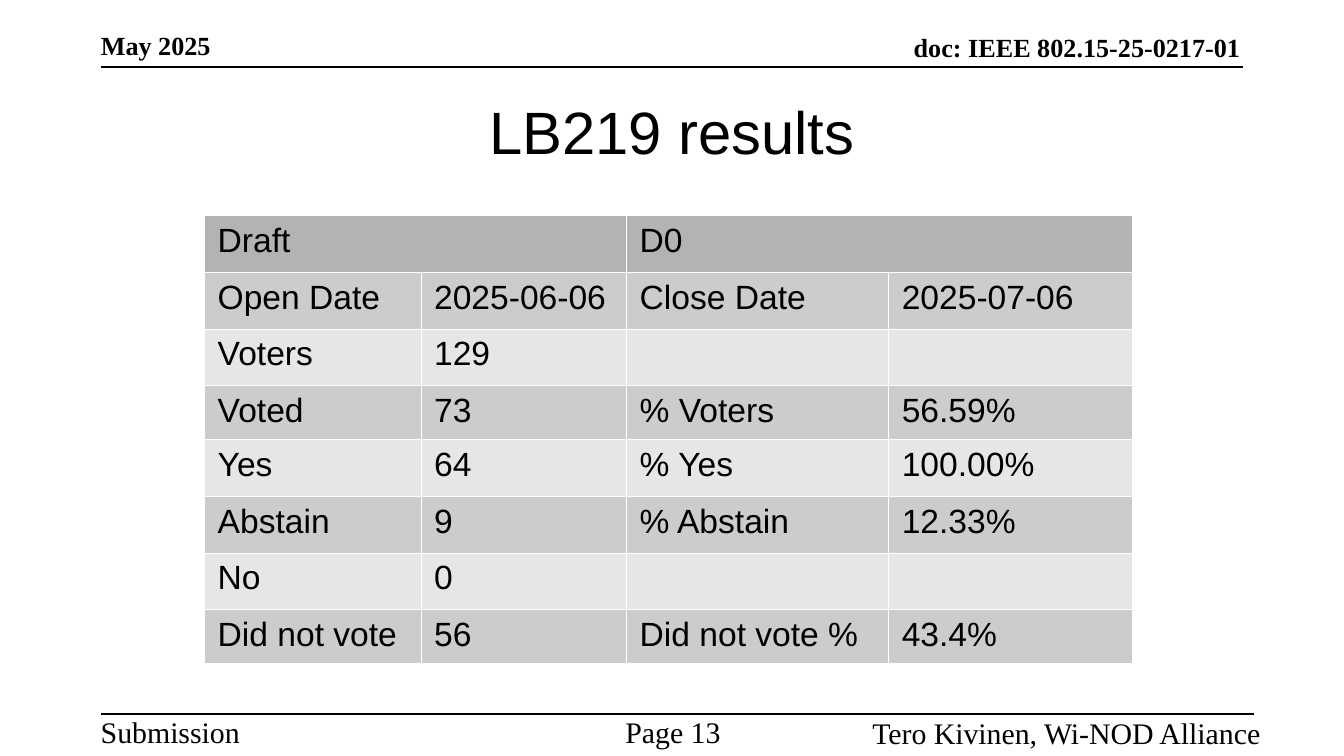
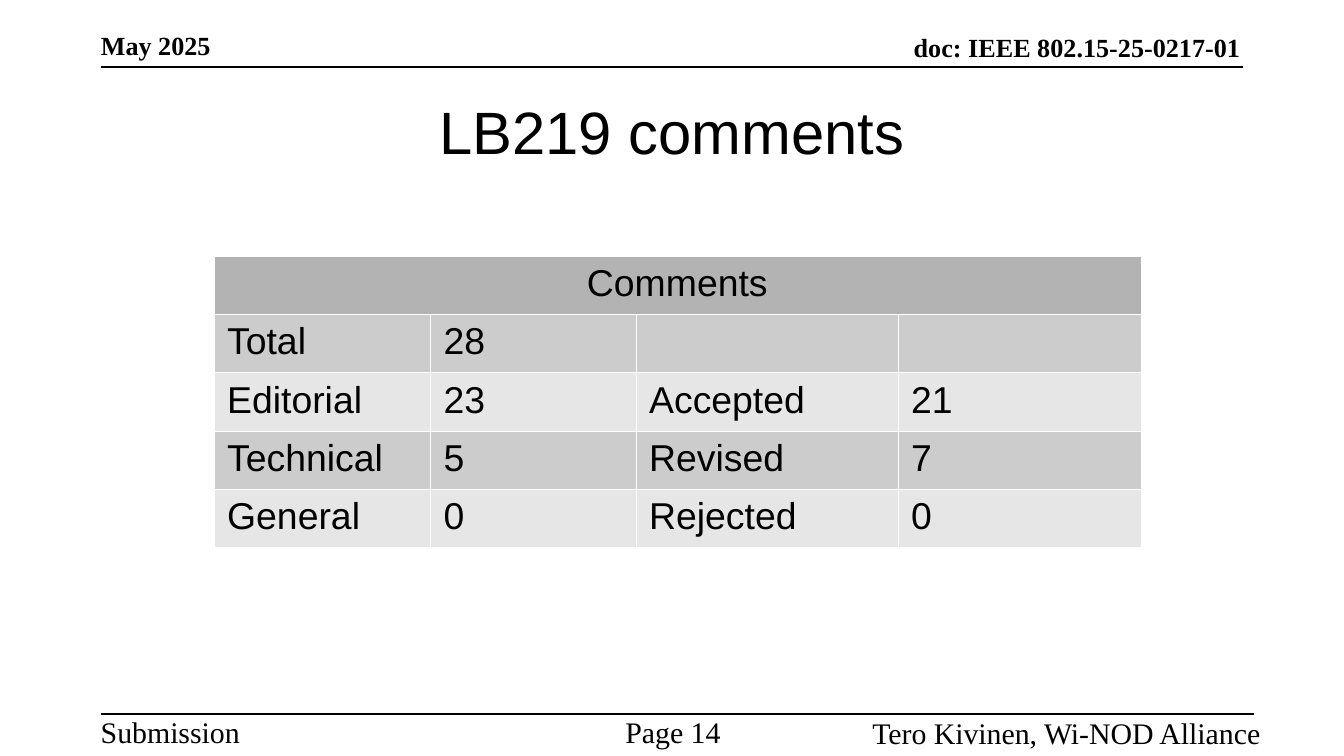
from dataclasses import dataclass

from lxml.etree import SubElement
from pptx import Presentation
from pptx.dml.color import RGBColor
from pptx.enum.shapes import MSO_CONNECTOR
from pptx.enum.text import MSO_ANCHOR, PP_ALIGN
from pptx.oxml.ns import qn
from pptx.slide import Slide
from pptx.table import _Cell
from pptx.util import Emu, Inches, Pt

WIDTH, HEIGHT = Inches(10), Inches(5.625)
GRID_COLUMNS, GRID_ROWS = 100, 40

BLACK, WHITE = "000000", "FFFFFF"
HEADING_FILL = "B3B3B3"
BAND_FILLS = ("CCCCCC", "E6E6E6")
SANS, SERIF = "Arial", "Times New Roman"
BORDER_WIDTH = Pt(0.06)

LEFT_EDGE = 7.5
HEADER_RULE, FOOTER_RULE = 3.56, 37.76
TABLE_COLUMNS = (16.1, 15.3, 19.5, 18.1)
TABLE_ROW, SHORT_ROW = 3, 2.7


@dataclass(frozen=True)
class Label:
    """A line of text; its place is in grid columns and rows."""
    text: str
    left: float
    top: float
    width: float
    height: float
    size: float
    font: str = SERIF
    bold: bool = False
    align: PP_ALIGN = PP_ALIGN.LEFT
    anchor: MSO_ANCHOR = MSO_ANCHOR.TOP


@dataclass(frozen=True)
class Rule:
    row: float
    right: float


@dataclass(frozen=True)
class Heading:
    """A cell of the top row, spanning some columns."""
    text: str
    span: int
    align: PP_ALIGN = PP_ALIGN.LEFT


@dataclass(frozen=True)
class ResultPage:
    title: str
    number: int
    left: float
    top: float
    size: float
    headings: tuple[Heading, ...]
    body: tuple[tuple[str, ...], ...]
    short_rows: tuple[int, ...] = ()


RULES = (Rule(HEADER_RULE, 92.5), Rule(FOOTER_RULE, 93.3))
FURNITURE = (
    Label("doc: IEEE 802.15-25-0217-01", 33.9, 2.28, 58.4, 1.07, 14, bold=True,
          align=PP_ALIGN.RIGHT, anchor=MSO_ANCHOR.BOTTOM),
    Label("May 2025", LEFT_EDGE, 2.13, 27.9, 1.07, 14, bold=True,
          anchor=MSO_ANCHOR.BOTTOM),
    Label("Submission", LEFT_EDGE, FOOTER_RULE, 18.7, 1.64, 16),
    Label("Tero Kivinen, Wi-NOD Alliance", 57.1, 37.83, 36.7, 1.64, 16,
          align=PP_ALIGN.RIGHT),
)

PAGES = (
    ResultPage(
        "LB219 results", 13, 15.2, 11.4, 18,
        (Heading("Draft", 2), Heading("D0", 2)),
        (
            ("Open Date", "2025-06-06", "Close Date", "2025-07-06"),
            ("Voters", "129", "", ""),
            ("Voted", "73", "% Voters", "56.59%"),
            ("Yes", "64", "% Yes", "100.00%"),
            ("Abstain", "9", "% Abstain", "12.33%"),
            ("No", "0", "", ""),
            ("Did not vote", "56", "Did not vote %", "43.4%"),
        ),
        short_rows=(3, 7),
    ),
    ResultPage(
        "LB219 comments", 14, 15.9, 13.54, 20,
        (Heading("Comments", 4, PP_ALIGN.CENTER),),
        (
            ("Total", "28", "", ""),
            ("Editorial", "23", "Accepted", "21"),
            ("Technical", "5", "Revised", "7"),
            ("General", "0", "Rejected", "0"),
        ),
    ),
)


def across(columns: float) -> Emu:
    return Emu(round(WIDTH * columns / GRID_COLUMNS))


def down(rows: float) -> Emu:
    return Emu(round(HEIGHT * rows / GRID_ROWS))


def color(value: str) -> RGBColor:
    return RGBColor.from_string(value)


def style_paragraph(para, size: float, font: str, align: PP_ALIGN,
                    bold: bool = False) -> None:
    para.alignment = align
    para.font.size = Pt(size)
    para.font.name = font
    para.font.bold = bold
    para.font.color.rgb = color(BLACK)


def add_label(page: Slide, label: Label) -> None:
    box = page.shapes.add_textbox(across(label.left), down(label.top),
                                  across(label.width), down(label.height))
    frame = box.text_frame
    frame.word_wrap = True
    frame.vertical_anchor = label.anchor
    frame.margin_left = frame.margin_right = 0
    frame.margin_top = frame.margin_bottom = 0
    frame.text = label.text
    style_paragraph(frame.paragraphs[0], label.size, label.font, label.align,
                    label.bold)


def add_rule(page: Slide, rule: Rule) -> None:
    line = page.shapes.add_connector(
        MSO_CONNECTOR.STRAIGHT, across(LEFT_EDGE), down(rule.row),
        across(rule.right), down(rule.row))
    line.line.color.rgb = color(BLACK)
    line.line.width = Pt(1)
    SubElement(line._element.spPr, qn("a:effectLst"))


def paint_cell(cell: _Cell, fill: str) -> None:
    """Give a cell thin white borders and a solid fill."""
    properties = cell._tc.get_or_add_tcPr()
    for side in ("lnL", "lnR", "lnT", "lnB"):
        border = SubElement(properties, qn(f"a:{side}"), w=str(BORDER_WIDTH))
        solid = SubElement(border, qn("a:solidFill"))
        SubElement(solid, qn("a:srgbClr"), val=WHITE)
    cell.fill.solid()
    cell.fill.fore_color.rgb = color(fill)


def write_cell(cell: _Cell, text: str, size: float,
               align: PP_ALIGN = PP_ALIGN.LEFT) -> None:
    cell.text = text
    style_paragraph(cell.text_frame.paragraphs[0], size, SANS, align)


def add_result_table(page: Slide, result: ResultPage) -> None:
    heights = [SHORT_ROW if index in result.short_rows else TABLE_ROW
               for index in range(len(result.body) + 1)]
    table = page.shapes.add_table(
        len(heights), len(TABLE_COLUMNS), across(result.left),
        down(result.top), across(sum(TABLE_COLUMNS)), down(sum(heights))).table
    table.first_row = table.horz_banding = False
    for column, width in zip(table.columns, TABLE_COLUMNS):
        column.width = across(width)
    for index, (row, height) in enumerate(zip(table.rows, heights)):
        row.height = down(height)
        fill = BAND_FILLS[(index - 1) % 2] if index else HEADING_FILL
        for cell in row.cells:
            paint_cell(cell, fill)

    start = 0
    for heading in result.headings:
        cell = table.cell(0, start)
        cell.merge(table.cell(0, start + heading.span - 1))
        write_cell(cell, heading.text, result.size, heading.align)
        start += heading.span
    for row_index, texts in enumerate(result.body, start=1):
        for column_index, text in enumerate(texts):
            write_cell(table.cell(row_index, column_index), text, result.size)


def add_result_page(deck, result: ResultPage) -> None:
    page = deck.slides.add_slide(deck.slide_layouts[6])
    for rule in RULES:
        add_rule(page, rule)
    for label in FURNITURE:
        add_label(page, label)
    add_label(page, Label(f"Page {result.number} ", 41, FOOTER_RULE, 18.7, 1.64,
                          16, align=PP_ALIGN.CENTER))
    add_label(page, Label(result.title, 5, HEADER_RULE, 90, 6.67, 32, SANS,
                          align=PP_ALIGN.CENTER, anchor=MSO_ANCHOR.MIDDLE))
    add_result_table(page, result)


def main() -> None:
    deck = Presentation()
    deck.slide_width, deck.slide_height = WIDTH, HEIGHT
    for result in PAGES:
        add_result_page(deck, result)
    deck.save("out.pptx")


if __name__ == "__main__":
    main()
